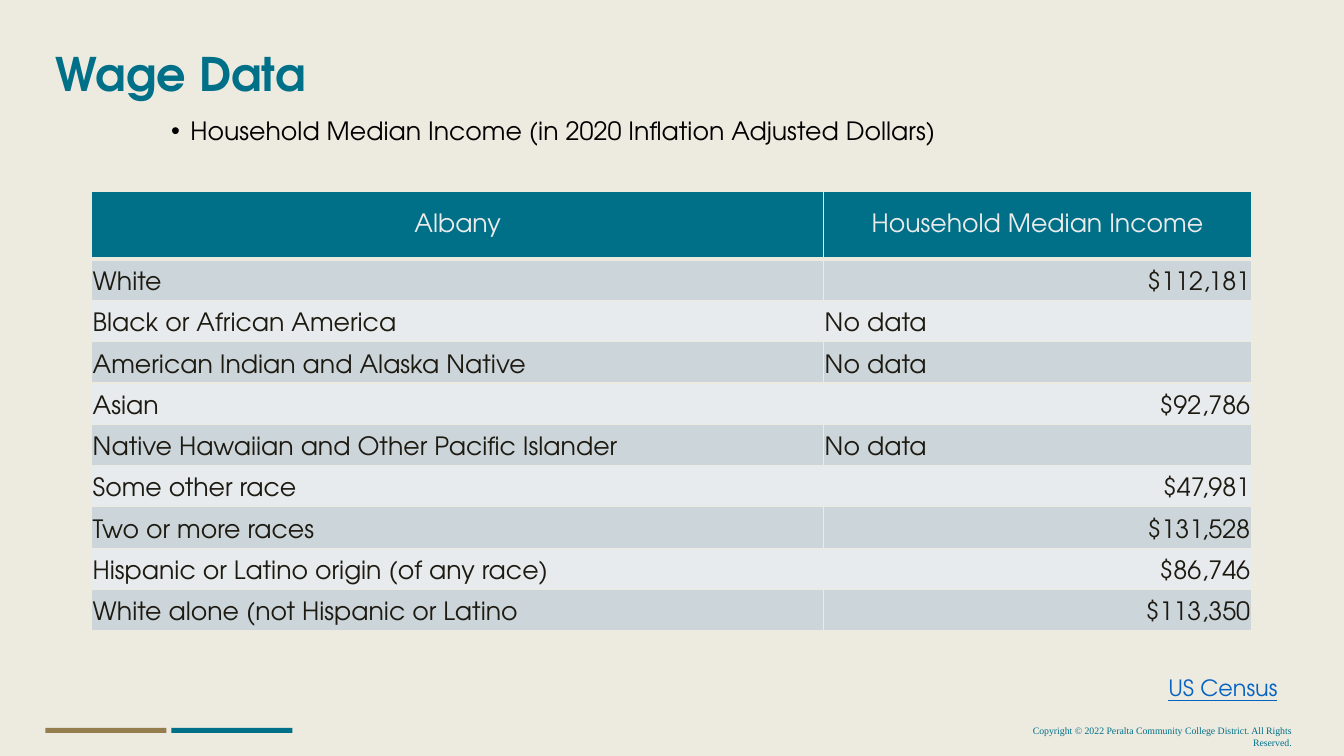
from lxml.etree import SubElement
from pptx import Presentation
from pptx.dml.color import RGBColor
from pptx.enum.shapes import MSO_SHAPE
from pptx.enum.text import MSO_ANCHOR, MSO_AUTO_SIZE, PP_ALIGN
from pptx.oxml.ns import qn
from pptx.util import Inches, Pt

COLORS = {
    "paper": "EDEAE0", "teal": "007088", "bronze": "947D4E", "black": "000000",
    "link": "0563C1", "header_text": "EBEBEB", "cell_text": "1D1A11",
    "odd_row": "CCD5DA", "even_row": "E7EBED",
}
SANS, SERIF = "TeX Gyre Adventor", "Times New Roman"

HEADER = ("Albany", "Household Median Income")
INCOMES = [
    ("White", "$112,181"),
    ("Black or African America", "No data"),
    ("American Indian and Alaska Native", "No data"),
    ("Asian", "$92,786"),
    ("Native Hawaiian and Other Pacific Islander", "No data"),
    ("Some other race", "$47,981"),
    ("Two or more races", "$131,528"),
    ("Hispanic or Latino origin (of any race)", "$86,746"),
    ("White alone (not Hispanic or Latino", "$113,350"),
]
COLUMN_WIDTHS = (7.26, 4.24)
HEADER_HEIGHT, ROW_HEIGHT = 0.67, 0.41


def rgb(name):
    return RGBColor.from_string(COLORS[name])


def apply(target, values):
    for name, value in values.items():
        setattr(target, name, value)


def write(frame, text, size, color, font=SANS, align=PP_ALIGN.LEFT, spacing=None, **styles):
    """Put one formatted paragraph into a text frame."""
    paragraph = frame.paragraphs[0]
    apply(paragraph, {"alignment": align, "line_spacing": spacing})
    run = paragraph.add_run()
    run.text = text
    apply(run.font, {"name": font, "size": Pt(size), **styles})
    run.font.color.rgb = rgb(color)


def add_text(slide, box, text, size, color, **styles):
    frame = slide.shapes.add_textbox(*map(Inches, box)).text_frame
    frame.word_wrap = True
    write(frame, text, size, color, **styles)
    return frame


def add_title(slide, box, text):
    title = slide.shapes.title
    apply(title, dict(zip(("left", "top", "width", "height"), map(Inches, box))))
    apply(title.text_frame, {"vertical_anchor": MSO_ANCHOR.MIDDLE,
                             "auto_size": MSO_AUTO_SIZE.NONE})
    write(title.text_frame, text, 33, "teal", spacing=0.9, bold=True)


def add_bullet(paragraph, indent):
    properties = paragraph._p.get_or_add_pPr()
    properties.set("marL", str(Inches(indent)))
    properties.set("indent", str(-Inches(indent)))
    SubElement(properties, qn("a:buFont"), typeface="Arial")
    SubElement(properties, qn("a:buChar"), char="•")


def add_bar(slide, left, color):
    bar = slide.shapes.add_shape(
        MSO_SHAPE.RECTANGLE, *map(Inches, (left, 7.22, 1.2, 0.05)))
    bar.shadow.inherit = False
    bar.fill.solid()
    bar.fill.fore_color.rgb = rgb(color)
    bar.line.fill.background()


def add_borders(cell, bottom_width):
    properties = cell._tc.get_or_add_tcPr()
    for side, width in {"L": 1, "R": 1, "T": 1, "B": bottom_width}.items():
        line = SubElement(properties, qn(f"a:ln{side}"), w=str(Pt(width)))
        fill = SubElement(line, qn("a:solidFill"))
        SubElement(fill, qn("a:srgbClr"), val=COLORS["paper"])


def fill_cell(cell, text, fill, color, align, anchor, bottom_width=1, bottom_margin=0.05):
    apply(cell, {"margin_left": Inches(0.01), "margin_right": Inches(0.01),
                 "margin_top": Inches(0.01), "margin_bottom": Inches(bottom_margin),
                 "vertical_anchor": anchor})
    add_borders(cell, bottom_width)
    cell.fill.solid()
    cell.fill.fore_color.rgb = rgb(fill)
    write(cell.text_frame, text, 18, color, align=align, bold=False)


def add_income_table(slide, left, top):
    height = HEADER_HEIGHT + ROW_HEIGHT * len(INCOMES)
    table = slide.shapes.add_table(
        len(INCOMES) + 1, len(HEADER),
        *map(Inches, (left, top, sum(COLUMN_WIDTHS), height))).table
    for column, width in zip(table.columns, COLUMN_WIDTHS):
        column.width = Inches(width)

    # Header row
    table.rows[0].height = Inches(HEADER_HEIGHT)
    for index, heading in enumerate(HEADER):
        fill_cell(table.cell(0, index), heading, "teal", "header_text",
                  PP_ALIGN.CENTER, MSO_ANCHOR.MIDDLE, bottom_width=3, bottom_margin=0.01)

    # Banded rows: amounts to the right, words to the left
    for number, income in enumerate(INCOMES, start=1):
        table.rows[number].height = Inches(ROW_HEIGHT)
        band = "odd_row" if number % 2 else "even_row"
        for index, text in enumerate(income):
            align = PP_ALIGN.RIGHT if text.startswith("$") else PP_ALIGN.LEFT
            fill_cell(table.cell(number, index), text, band, "cell_text",
                      align, MSO_ANCHOR.BOTTOM)


def main():
    deck = Presentation()
    apply(deck, {"slide_width": Inches(13.33), "slide_height": Inches(7.5)})
    slide = deck.slides.add_slide(deck.slide_layouts[5])
    slide.background.fill.solid()
    slide.background.fill.fore_color.rgb = rgb("paper")

    # Footer
    add_text(slide, (9.74, 7.14, 3.17, 0.21),
             "Copyright © 2022 Peralta Community College District. All Rights Reserved.",
             7, "teal", font=SERIF, align=PP_ALIGN.RIGHT)
    for left, color in ((1.7, "teal"), (0.45, "bronze")):
        add_bar(slide, left, color)

    # Heading and subject
    add_title(slide, (0.45, 0.4, 12.15, 0.72), "Wage Data")
    subject = add_text(slide, (1.6, 1.13, 9.45, 0.5),
                       "Household Median Income (in 2020 Inflation Adjusted Dollars)",
                       18, "black", spacing=0.9)
    add_bullet(subject.paragraphs[0], 0.19)

    # Data and its origin
    add_text(slide, (11.49, 6.64, 1.53, 0.37), "US Census", 16, "link", underline=True)
    add_income_table(slide, 0.91, 1.9)

    deck.save("out.pptx")


if __name__ == "__main__":
    main()
